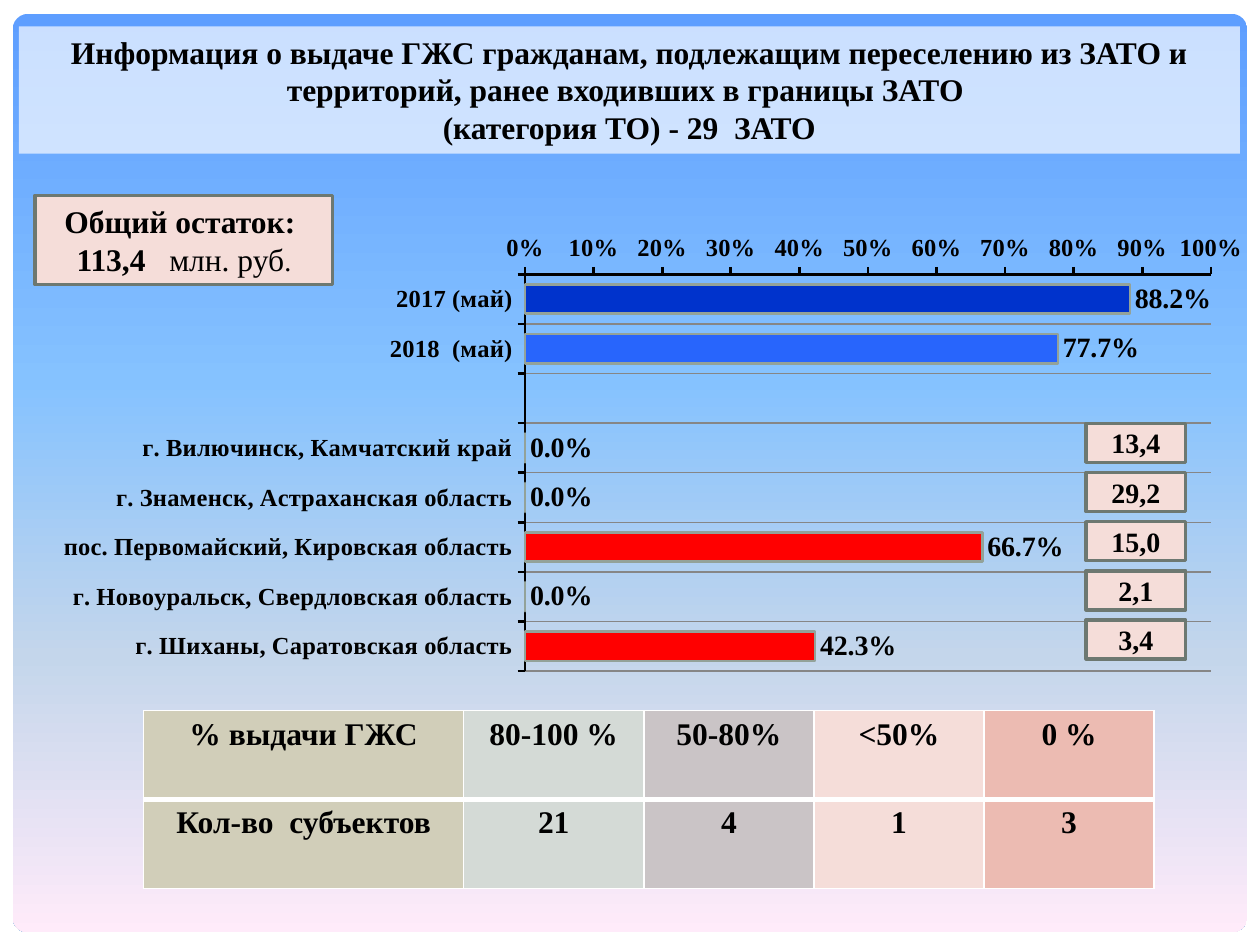
from copy import deepcopy
from pptx import Presentation
from pptx.chart.data import CategoryChartData
from pptx.dml.color import RGBColor
from pptx.enum.chart import XL_CHART_TYPE as ChartType, XL_LABEL_POSITION as LabelPos, XL_TICK_MARK as Tick
from pptx.enum.shapes import MSO_SHAPE as Shape
from pptx.enum.text import MSO_ANCHOR as Anchor, MSO_AUTO_SIZE as AutoSize, PP_ALIGN as Align
from pptx.oxml import parse_xml
from pptx.oxml.ns import nsdecls
from pptx.util import Inches, Pt

COLS, ROWS = 100, 75
WIDTH, HEIGHT = Inches(10), Inches(7.5)
FONT = "Times New Roman"
COLORS = {
    "black": "000000", "white": "FFFFFF", "grid": "868686",
    "box": "F5DDD9", "box_line": "6D7871",
    "regions": "FF0000", "year_2017": "0033CC", "year_2018": "2865FC", "bar_line": "93A299",
    "head": "D1CEB9", "high": "D4DAD6", "middle": "CAC4C6", "low": "F5DDD9", "zero": "ECBBB2",
}
SKY = [(0, "5E9EFF"), (0.4, "85C2FF"), (0.7, "C4D6EB"), (1, "FFEBFA")]

ISSUED = [
    ("2017 (май)", 0.882), ("2018  (май)", 0.777), ("", None),
    ("г. Вилючинск, Камчатский край", 0), ("г. Знаменск, Астраханская область", 0),
    ("пос. Первомайский, Кировская область", 0.667),
    ("г. Новоуральск, Свердловская область", 0), ("г. Шиханы, Саратовская область", 0.423),
]
BALANCES = ["13,4", "29,2", "15,0", "2,1", "3,4"]
SUMMARY = [
    ("head", 25.4, "% выдачи ГЖС", "Кол-во  субъектов"),
    ("high", 14.3, "80-100 %", "21"),
    ("middle", 13.5, "50-80%", "4"),
    ("low", 13.5, "<50%", "1"),
    ("zero", 13.5, "0 %", "3"),
]


def rgb(name):
    return RGBColor.from_string(COLORS[name])


def span(col, row, cols, rows):
    return (int(WIDTH * col / COLS), int(HEIGHT * row / ROWS),
            int(WIDTH * cols / COLS), int(HEIGHT * rows / ROWS))


def paint_sky(fill):
    fill.gradient()
    fill.gradient_angle = 270
    stops = fill.gradient_stops
    first = stops[0]._gs
    while len(stops) < len(SKY):
        first.addnext(deepcopy(first))
    for stop, (position, color) in zip(stops, SKY):
        stop.position = position
        stop.color.rgb = RGBColor.from_string(color)


def style_font(font, size, bold=True):
    font.name, font.size, font.bold = FONT, Pt(size), bold
    font.color.rgb = rgb("black")


def style_line(line, color, width):
    line.color.rgb = rgb(color)
    line.width = Pt(width)


def write(frame, paragraphs):
    frame.word_wrap = True
    for index, runs in enumerate(paragraphs):
        paragraph = frame.add_paragraph() if index else frame.paragraphs[0]
        paragraph.alignment = Align.CENTER
        for text, size, bold in runs:
            run = paragraph.add_run()
            run.text = text
            style_font(run.font, size, bold)


def add_panel(slide, place, fill="white", kind=Shape.RECTANGLE):
    panel = slide.shapes.add_shape(kind, *place)
    panel.shadow.inherit = False
    panel.fill.solid()
    panel.fill.fore_color.rgb = rgb(fill)
    panel.line.fill.background()
    return panel


def add_backdrop(slide):
    paint_sky(slide.background.fill)
    add_panel(slide, span(0, 0, COLS, ROWS))
    sheet = add_panel(slide, span(1, 1.1, 98, 72.9), kind=Shape.ROUNDED_RECTANGLE)
    sheet.adjustments[0] = 0.017
    paint_sky(sheet.fill)


def add_title(slide):
    title = add_panel(slide, span(1.5, 2.1, 96.9, 10.1))
    white = title.fill._xPr.solidFill[0]
    white.append(parse_xml(f'<a:alpha {nsdecls("a")} val="68000"/>'))
    frame = title.text_frame
    frame.vertical_anchor = Anchor.TOP
    write(frame, [
        [("Информация о выдаче ГЖС гражданам, подлежащим переселению из ЗАТО "
          "и территорий, ранее входивших в границы ЗАТО ", 18, True)],
        [("(категория ТО) - 29  ЗАТО", 18, True)],
    ])
    frame.auto_size = AutoSize.SHAPE_TO_FIT_TEXT


def add_box(slide, place, paragraphs, anchor=Anchor.MIDDLE, inset=0.05):
    box = add_panel(slide, place, "box")
    style_line(box.line, "box_line", 2)
    frame = box.text_frame
    frame.vertical_anchor = anchor
    frame.margin_top = frame.margin_bottom = Inches(inset)
    write(frame, paragraphs)


def style_axis(axis):
    axis.major_tick_mark, axis.minor_tick_mark = Tick.OUTSIDE, Tick.NONE
    style_font(axis.tick_labels.font, 14)
    style_line(axis.format.line, "black", 1.5)


def set_plot_area(chart, **shares):
    values = "".join(f'<c:{key} val="{share}"/>' for key, share in shares.items())
    plot_area = chart._chartSpace.chart.plotArea
    for layout in plot_area.findall("{*}layout"):
        plot_area.remove(layout)
    plot_area.insert(0, parse_xml(
        f'<c:layout {nsdecls("c")}><c:manualLayout><c:layoutTarget val="inner"/>'
        f'<c:xMode val="edge"/><c:yMode val="edge"/>{values}</c:manualLayout></c:layout>'))


def add_issue_chart(slide):
    data = CategoryChartData(number_format="0.0%")
    data.categories = [name for name, _ in ISSUED]
    data.add_series("Series 1", [share for _, share in ISSUED])
    chart = slide.shapes.add_chart(ChartType.BAR_CLUSTERED, *span(2.8, 17.8, 97.2, 36.2), data).chart
    chart.has_legend = chart.has_title = False
    style_font(chart.font, 18, False)
    chart.font.name = "Quicksand"
    set_plot_area(chart, x=0.4, y=0.11, w=0.56, h=0.87)

    places, shares = chart.category_axis, chart.value_axis
    style_axis(places)
    places.reverse_order = True
    places.has_major_gridlines = True
    style_line(places.major_gridlines.format.line, "grid", 0.75)
    style_axis(shares)
    shares.has_major_gridlines = False
    shares.minimum_scale, shares.maximum_scale, shares.major_unit = 0, 1, 0.1
    shares.tick_labels.number_format = "0%"
    shares.tick_labels.number_format_is_linked = False

    plot = chart.plots[0]
    plot.gap_width = 70
    plot.vary_by_categories = False
    bars = plot.series[0]
    bars.invert_if_negative = False
    for part, color in ((bars, "regions"), (bars.points[0], "year_2017"), (bars.points[1], "year_2018")):
        part.format.fill.solid()
        part.format.fill.fore_color.rgb = rgb(color)
        style_line(part.format.line, "bar_line", 1.5)
    labels = bars.data_labels
    labels.show_value = True
    labels.position = LabelPos.OUTSIDE_END
    labels.number_format, labels.number_format_is_linked = "0.0%", False
    style_font(labels.font, 16)


def set_borders(cell, **widths):
    properties = cell._tc.get_or_add_tcPr()
    for index, (side, width) in enumerate(widths.items()):
        properties.insert(index, parse_xml(
            f'<a:{side} {nsdecls("a")} w="{Pt(width)}"><a:solidFill>'
            f'<a:srgbClr val="{COLORS["white"]}"/></a:solidFill></a:{side}>'))


def add_summary(slide):
    total = sum(cols for _, cols, *_ in SUMMARY)
    table = slide.shapes.add_table(2, len(SUMMARY), *span(11.4, 56.4, total, 14.1)).table
    for column, (color, cols, *texts) in enumerate(SUMMARY):
        table.columns[column].width = int(WIDTH * cols / COLS)
        for row, text in enumerate(texts):
            cell = table.cell(row, column)
            cell.fill.solid()
            cell.fill.fore_color.rgb = rgb(color)
            set_borders(cell, lnL=1, lnR=1, lnT=3 if row else 1, lnB=1 if row else 3)
            write(cell.text_frame, [[(text, 18, True)]])


def main():
    deck = Presentation()
    deck.slide_width, deck.slide_height = WIDTH, HEIGHT
    slide = deck.slides.add_slide(deck.slide_layouts[6])
    add_backdrop(slide)
    add_title(slide)
    add_issue_chart(slide)
    add_summary(slide)
    add_box(slide, span(2.8, 15.5, 23.6, 7.1), [
        [("Общий остаток: ", 18, True)],
        [("113,4", 18, True), ("   млн. руб", 18, False), (".", 16, False)],
    ])
    for index, balance in enumerate(BALANCES):
        add_box(slide, span(86.2, 33.6 + 3.9 * index, 7.9, 3.1), [[(balance, 16, True)]], Anchor.TOP, 0.02)
    deck.save("out.pptx")


if __name__ == "__main__":
    main()
